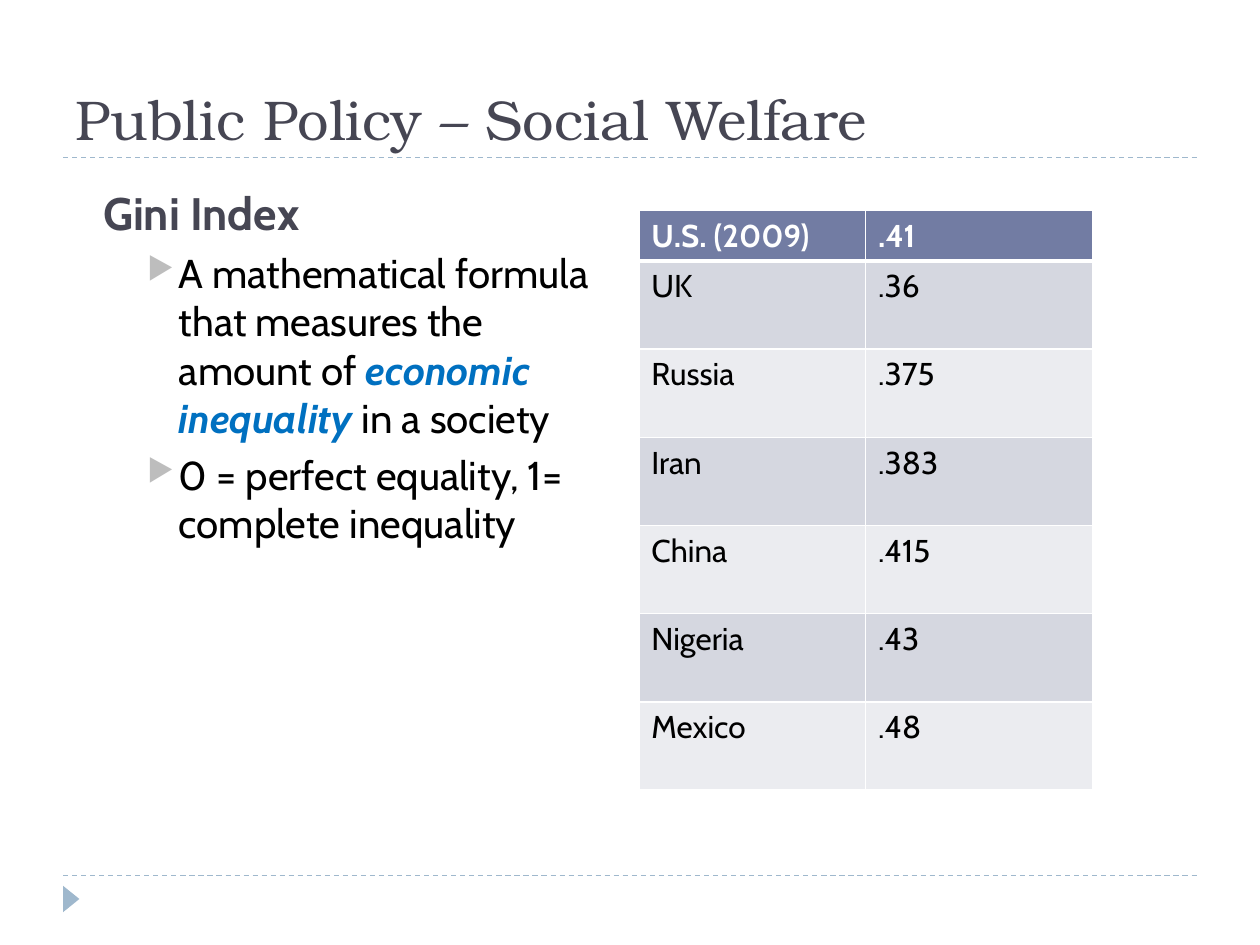
from lxml.etree import SubElement
from pptx import Presentation
from pptx.dml.color import RGBColor
from pptx.enum.dml import MSO_LINE
from pptx.enum.shapes import MSO_CONNECTOR, MSO_SHAPE
from pptx.enum.text import MSO_ANCHOR
from pptx.oxml.ns import qn
from pptx.util import Inches, Pt

WIDTH, HEIGHT = 10, 7.5
MARGIN = WIDTH * 0.05
COLORS = {
    "white": "FFFFFF",
    "black": "000000",
    "heading": "464653",
    "accent": "9FB8CD",
    "emphasis": "0070C0",
    "bullet": "BDBDBD",
    "header": "727CA3",
    "odd": "D5D7E0",
    "even": "EBECF0",
}
TITLE_FONT, BODY_FONT = "TeX Gyre Bonum", "Cabin"
GINI = [
    ("U.S. (2009)", ".41"),
    ("UK", ".36"),
    ("Russia", ".375"),
    ("Iran", ".383"),
    ("China", ".415"),
    ("Nigeria", ".43"),
    ("Mexico", ".48"),
]


def color(name):
    """Return the named palette colour."""
    return RGBColor.from_string(COLORS[name])


def add_text(paragraph, text, size=23, font=BODY_FONT, ink="black", bold=False, italic=False):
    """Append one formatted run to a paragraph."""
    run = paragraph.add_run()
    run.text = text
    run.font.size, run.font.name = Pt(size), font
    run.font.bold, run.font.italic = bold, italic
    run.font.color.rgb = color(ink)


def add_frame(slide, left, top, width, height, anchor=MSO_ANCHOR.TOP):
    """Add a wrapping text box and return its text frame."""
    frame = slide.shapes.add_textbox(*map(Inches, (left, top, width, height))).text_frame
    frame.word_wrap = True
    frame.vertical_anchor = anchor
    return frame


def indent(paragraph, level, margin, hanging=0):
    """Set the outline level, spacing and indents of a paragraph."""
    paragraph.level = level
    paragraph.space_before = Pt(5)
    properties = paragraph._p.get_or_add_pPr()
    properties.set("marL", str(Inches(margin)))
    properties.set("indent", str(Inches(-hanging)))
    return properties


def add_bullet(frame):
    """Add a paragraph with a triangular bullet."""
    paragraph = frame.add_paragraph()
    properties = indent(paragraph, 2, 0.9, 0.25)
    bullet_color = SubElement(properties, qn("a:buClr"))
    SubElement(bullet_color, qn("a:srgbClr"), val=COLORS["bullet"])
    SubElement(properties, qn("a:buSzPct"), val="76000")
    SubElement(properties, qn("a:buChar"), char="▶")
    return paragraph


def add_rule(slide, top):
    """Add a dashed rule between the side margins."""
    rule = slide.shapes.add_connector(
        MSO_CONNECTOR.STRAIGHT, *map(Inches, (MARGIN, top, WIDTH - MARGIN, top))
    )
    rule.line.color.rgb = color("accent")
    rule.line.width = Pt(0.75)
    rule.line.dash_style = MSO_LINE.DASH
    SubElement(rule._element.spPr, qn("a:effectLst"))


def add_marker(slide):
    """Add the footer triangle pointing right."""
    marker = slide.shapes.add_shape(
        MSO_SHAPE.ISOSCELES_TRIANGLE, *map(Inches, (0.46, 7.07, 0.21, 0.13))
    )
    marker.rotation = 90
    marker.shadow.inherit = False
    marker.fill.solid()
    marker.fill.fore_color.rgb = color("accent")
    marker.line.fill.background()


def add_border(cell, side, width):
    """Draw one white border of a cell."""
    border = SubElement(cell._tc.get_or_add_tcPr(), qn(f"a:ln{side}"), w=str(Pt(width)))
    fill = SubElement(border, qn("a:solidFill"))
    SubElement(fill, qn("a:srgbClr"), val=COLORS["white"])


def add_gini_table(slide):
    """Add the table of Gini values by country."""
    table = slide.shapes.add_table(
        len(GINI), 2, *map(Inches, (5.07, 1.67, 3.6, 4.57))
    ).table
    for row, values in enumerate(GINI):
        header = row == 0
        table.rows[row].height = Inches(0.37 if header else 0.7)
        band = "header" if header else "odd" if row % 2 else "even"
        widths = {"L": 1, "R": 1, "T": 3 if row == 1 else 1, "B": 3 if header else 1}
        for column, value in enumerate(values):
            cell = table.cell(row, column)
            for side, width in widths.items():
                add_border(cell, side, width)
            cell.fill.solid()
            cell.fill.fore_color.rgb = color(band)
            add_text(cell.text_frame.paragraphs[0], value, size=18,
                     ink="white" if header else "black", bold=header)


def add_definition(slide):
    """Add the Gini Index heading and its two points."""
    frame = add_frame(slide, 0.42, 1.42, 4.42, 5.4)
    heading = frame.paragraphs[0]
    indent(heading, 1, 0.3)
    add_text(heading, "Gini Index", size=26, ink="heading", bold=True)
    formula = add_bullet(frame)
    add_text(formula, "A mathematical formula that measures the amount of ")
    add_text(formula, "economic inequality ", ink="emphasis", bold=True, italic=True)
    add_text(formula, "in a society")
    add_text(add_bullet(frame), "0 = perfect equality, 1= complete inequality")


def main():
    """Build and save the slide."""
    deck = Presentation()
    deck.slide_width, deck.slide_height = Inches(WIDTH), Inches(HEIGHT)
    slide = deck.slides.add_slide(deck.slide_layouts[6])
    for top in (6.95, 1.25):
        add_rule(slide, top)
    add_marker(slide)
    title = add_frame(slide, MARGIN, 0.25, WIDTH - 2 * MARGIN, 1, MSO_ANCHOR.BOTTOM)
    add_text(title.paragraphs[0], "Public Policy – Social Welfare",
             size=32, font=TITLE_FONT, ink="heading")
    add_definition(slide)
    add_gini_table(slide)
    deck.save("out.pptx")


if __name__ == "__main__":
    main()
